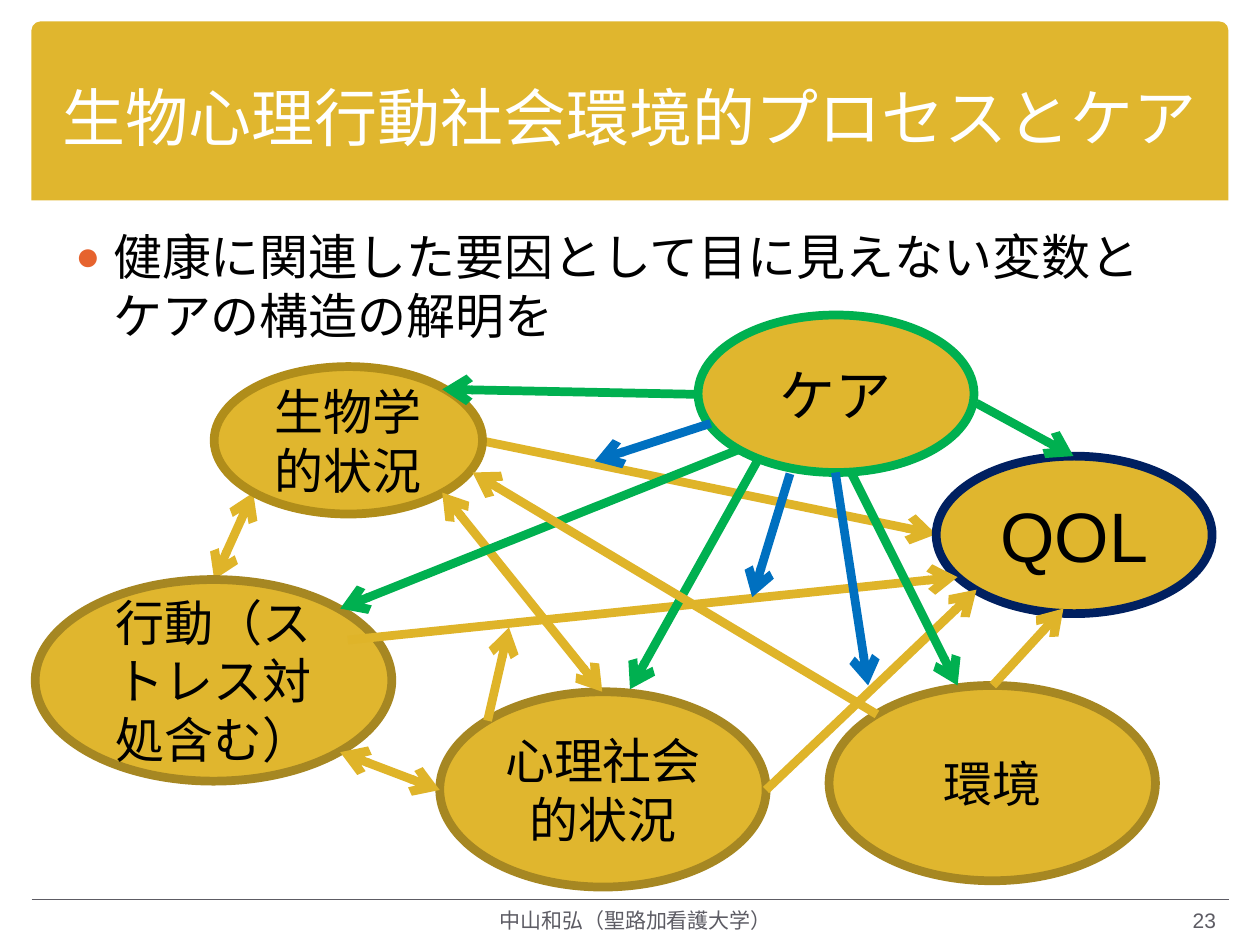
from dataclasses import dataclass

from lxml import etree
from pptx import Presentation
from pptx import util as u
from pptx.dml.color import RGBColor
from pptx.enum import shapes, text
from pptx.oxml import ns


@dataclass(frozen=True)
class Theme:
    gold: str = "E0B62E"
    arrow_gold: str = "DFB429"
    rim: str = "A68722"
    rim_light: str = "B08D1A"
    green: str = "00B050"
    blue: str = "0070C0"
    navy: str = "002060"
    bullet: str = "E6632E"
    grey: str = "5D5C64"
    black: str = "000000"
    white: str = "FFFFFF"
    title_font: str = "Montserrat"
    body_font: str = "Arial"
    title_size: int = 36
    body_size: int = 28
    care_size: int = 32
    goal_size: int = 40
    footer_size: int = 12
    stroke: int = 5


T = Theme()

FACTORS = [
    ("QOL", (7.43, 3.62, 2.19, 1.25), T.navy, T.goal_size),
    ("心理社会的状況", (3.49, 5.49, 2.59, 1.55), T.rim, T.body_size),
    ("行動（ストレス対処含む）", (0.28, 4.6, 2.83, 1.6), T.rim, T.body_size),
    ("生物学的状況", (1.7, 2.91, 2.13, 1.17), T.rim_light, T.body_size),
    ("ケア", (5.54, 2.5, 2.19, 1.25), T.green, T.care_size),
    ("環境", (6.58, 5.44, 2.59, 1.55), T.rim, T.body_size),
]

BACK_ARROWS = [
    ((1.7, 4.6), (2.01, 3.91), T.arrow_gold, True),
    ((3.83, 3.5), (7.43, 4.24), T.arrow_gold, False),
]

FRONT_ARROWS = [
    ((2.76, 5.08), (7.6, 4.58), T.arrow_gold, False),
    ((4.78, 5.49), (3.51, 3.91), T.arrow_gold, True),
    ((3.49, 6.27), (2.7, 5.97), T.arrow_gold, True),
    ((6.08, 6.27), (7.75, 4.68), T.arrow_gold, False),
    ((5.54, 3.13), (3.51, 3.09), T.green, False),
    ((5.86, 3.57), (2.7, 4.83), T.green, False),
    ((6.01, 3.66), (5, 5.47), T.green, False),
    ((5.64, 3.36), (4.72, 3.66), T.blue, False),
    ((6.27, 3.76), (5.97, 4.74), T.blue, False),
    ((6.63, 3.75), (6.89, 5.44), T.blue, False),
    ((7.75, 3.2), (8.52, 3.62), T.green, False),
    ((3.87, 5.72), (4.04, 4.98), T.arrow_gold, False),
    ((7.88, 5.44), (8.44, 4.83), T.arrow_gold, False),
    ((6.96, 5.67), (3.75, 3.75), T.arrow_gold, False),
    ((6.76, 3.76), (7.6, 5.44), T.green, False),
]


def rgb(value):
    return RGBColor.from_string(value)


def inches(values):
    return [u.Inches(value) for value in values]


def write(box, words, size, color, align, anchor=text.MSO_ANCHOR.MIDDLE,
          font=T.body_font):
    frame = box.text_frame
    frame.word_wrap = True
    frame.auto_size = text.MSO_AUTO_SIZE.NONE
    frame.vertical_anchor = anchor
    para = frame.paragraphs[0]
    para.alignment = align
    span = para.add_run()
    span.text = words
    span.font.name = font
    span.font.size = u.Pt(size)
    span.font.color.rgb = rgb(color)
    return para


def add_label(page, words, place, size, color, align, **options):
    box = page.shapes.add_textbox(*inches(place))
    return write(box, words, size, color, align, **options)


def add_bullet(para, indent):
    props = para._p.get_or_add_pPr()
    props.set("marL", str(u.Inches(indent)))
    props.set("indent", str(-u.Inches(indent)))
    color = etree.SubElement(props, ns.qn("a:buClr"))
    etree.SubElement(color, ns.qn("a:srgbClr"), val=T.bullet)
    etree.SubElement(props, ns.qn("a:buSzPct"), val="85000")
    etree.SubElement(props, ns.qn("a:buFont"), typeface=T.body_font)
    etree.SubElement(props, ns.qn("a:buChar"), char="●")


def add_filled(page, kind, place):
    shape = page.shapes.add_shape(kind, *inches(place))
    shape.shadow.inherit = False
    shape.fill.solid()
    shape.fill.fore_color.rgb = rgb(T.gold)
    return shape


def add_banner(page):
    banner = add_filled(page, shapes.MSO_SHAPE.ROUND_2_SAME_RECTANGLE,
                        (0.25, 0.17, 9.5, 1.42))
    banner.adjustments[0] = 0.05
    banner.adjustments[1] = 0
    banner.line.fill.background()
    page.shapes.title._element.addprevious(banner._element)


def add_title(page, words):
    title = page.shapes.title
    title.left, title.top, title.width, title.height = inches(
        (0.33, 0.3, 9.33, 1.25))
    write(title, words, T.title_size, T.white, text.PP_ALIGN.CENTER,
          font=T.title_font)


def add_factor(page, words, place, rim, size):
    oval = add_filled(page, shapes.MSO_SHAPE.OVAL, place)
    oval.line.color.rgb = rgb(rim)
    oval.line.width = u.Pt(T.stroke)
    write(oval, words, size, T.black, text.PP_ALIGN.CENTER)


def add_line(page, start, end, color, width):
    line = page.shapes.add_connector(
        shapes.MSO_CONNECTOR.STRAIGHT, *inches(start + end))
    line.line.color.rgb = rgb(color)
    line.line.width = u.Pt(width)
    etree.SubElement(line._element.spPr, ns.qn("a:effectLst"))
    return line


def add_arrow(page, start, end, color, both_ways):
    arrow = add_line(page, start, end, color, T.stroke)
    stroke = arrow.line._get_or_add_ln()
    for tag in ("a:headEnd", "a:tailEnd") if both_ways else ("a:tailEnd",):
        etree.SubElement(stroke, ns.qn(tag), type="arrow")


def main():
    deck = Presentation()
    deck.slide_width, deck.slide_height = inches((10, 7.5))
    page = deck.slides.add_slide(deck.slide_layouts[5])

    add_banner(page)
    add_title(page, "生物心理行動社会環境的プロセスとケア")
    add_line(page, (0.25, 7.14), (9.75, 7.14), T.grey, 1)
    for arrow in BACK_ARROWS:
        add_arrow(page, *arrow)

    point = add_label(
        page, "健康に関連した要因として目に見えない変数とケアの構造の解明を",
        (0.5, 1.75, 9, 1.06), T.body_size, T.black, text.PP_ALIGN.LEFT,
        anchor=text.MSO_ANCHOR.TOP)
    add_bullet(point, 0.3)
    add_label(page, "中山和弘（聖路加看護大学）", (3.17, 7.13, 3.75, 0.35),
              T.footer_size, T.grey, text.PP_ALIGN.CENTER)
    add_label(page, "23", (7.42, 7.13, 2.33, 0.35),
              T.footer_size, T.grey, text.PP_ALIGN.RIGHT)

    for factor in FACTORS:
        add_factor(page, *factor)
    for arrow in FRONT_ARROWS:
        add_arrow(page, *arrow)

    deck.save("out.pptx")


if __name__ == "__main__":
    main()
